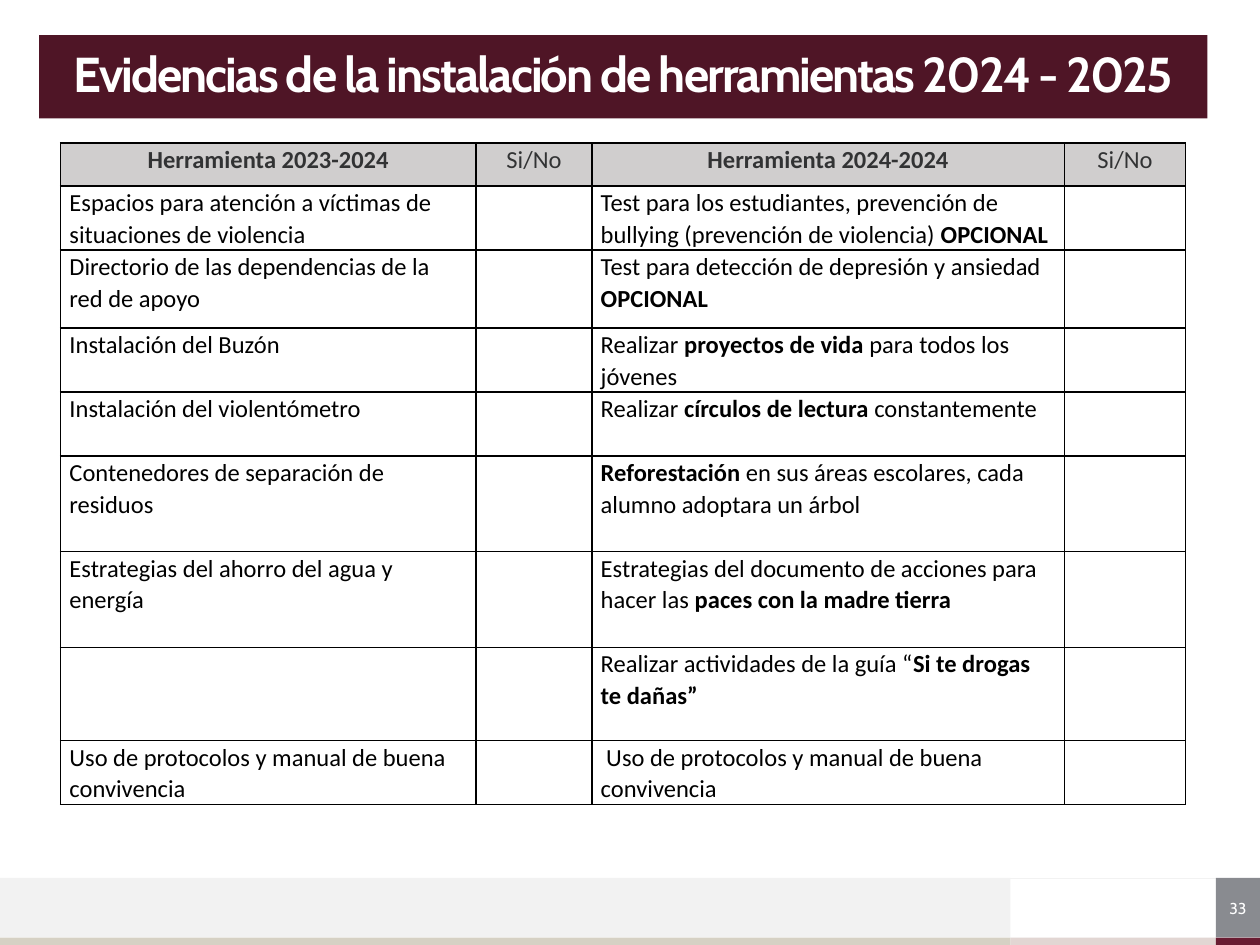
from lxml.etree import SubElement
from pptx import Presentation
from pptx.dml.color import RGBColor
from pptx.enum.shapes import MSO_CONNECTOR as Connector, MSO_SHAPE as Shape
from pptx.enum.text import MSO_ANCHOR as Anchor, PP_ALIGN as Align
from pptx.oxml import parse_xml
from pptx.oxml.ns import nsdecls, qn
from pptx.util import Cm, Pt

WHITE = RGBColor(0xFF, 0xFF, 0xFF)
BLACK = RGBColor(0x00, 0x00, 0x00)
WINE = RGBColor(0x4F, 0x15, 0x26)
CRIMSON = RGBColor(0x69, 0x1C, 0x32)
ROSE = RGBColor(0xE2, 0xD6, 0xD3)
SAND = RGBColor(0xD6, 0xD1, 0xC4)
PALE = RGBColor(0xF2, 0xF2, 0xF2)
SLATE = RGBColor(0x89, 0x8B, 0x90)
HEADER_GRAY = RGBColor(0xD0, 0xCE, 0xCE)
HEADER_TEXT = RGBColor(0x32, 0x33, 0x34)

COLUMN_WIDTHS = [8.38, 2.33, 9.53, 2.44]
ROW_HEIGHTS = [0.87, 1.29, 1.57, 1.29, 1.29, 1.93, 1.93, 1.88, 1.29]
HEADERS = ["Herramienta 2023-2024", "Si/No", "Herramienta 2024-2024", "Si/No"]
TOOLS = [
    ("Espacios para atención a víctimas de situaciones de violencia",
     [[("Test para los estudiantes, prevención de bullying (prevención de violencia) ", False),
       ("OPCIONAL", True)]]),
    ("Directorio de las dependencias de la red de apoyo",
     [[("Test para detección de depresión y ansiedad", False)], [("OPCIONAL", True)]]),
    ("Instalación del Buzón",
     [[("Realizar ", False), ("proyectos de vida ", True), ("para todos los jóvenes", False)]]),
    ("Instalación del violentómetro",
     [[("Realizar ", False), ("círculos de lectura ", True), ("constantemente", False)]]),
    ("Contenedores de separación de residuos",
     [[("Reforestación", True),
       (" en sus áreas escolares, cada alumno adoptara un árbol", False)]]),
    ("Estrategias del ahorro del agua y energía",
     [[("Estrategias del documento de acciones para hacer las ", False),
       ("paces con la madre tierra", True)]]),
    ("",
     [[("Realizar actividades de la guía “", False), ("Si te drogas te dañas”", True)]]),
    ("Uso de protocolos y manual de buena convivencia",
     [[(" Uso de protocolos y manual de buena convivencia", False)]]),
]


def add_run(paragraph, text, font_name, size, color, bold=False):
    run = paragraph.add_run()
    run.text = text
    run.font.name = font_name
    run.font.size = Pt(size)
    run.font.bold = bold
    run.font.color.rgb = color
    return run


def add_block(slide, left, top, width, height, color):
    block = slide.shapes.add_shape(Shape.RECTANGLE, Cm(left), Cm(top), Cm(width), Cm(height))
    block.shadow.inherit = False
    block.fill.solid()
    block.fill.fore_color.rgb = color
    block.line.fill.background()
    return block


def add_label(block, text, size, bold=False):
    frame = block.text_frame
    frame.word_wrap = True
    frame.vertical_anchor = Anchor.MIDDLE
    frame.margin_left = frame.margin_right = frame.margin_top = frame.margin_bottom = 0
    paragraph = frame.paragraphs[0]
    paragraph.alignment = Align.CENTER
    return paragraph, add_run(paragraph, text, "Cabin", size, WHITE, bold)


def add_title(slide, left, top, width, height):
    banner = add_block(slide, left, top, width, height, WINE)
    paragraph, title = add_label(
        banner, "Evidencias de la instalación de herramientas 2024 - 2025", 28, True)
    paragraph.line_spacing = 0.9
    title.font._element.set("spc", "-110")


def add_footer(slide, left, top, width, height):
    strip_height, number_width, band_width = 0.15, 0.89, 20.37
    band_height = height - strip_height
    strip_top = top + band_height
    number_left = left + width - number_width
    gap_left = left + band_width
    add_block(slide, gap_left, strip_top, number_left - gap_left, strip_height, ROSE)
    add_block(slide, left, top, band_width, band_height, PALE)
    add_block(slide, left, strip_top, band_width, strip_height, SAND)
    add_block(slide, number_left, strip_top, number_width, strip_height, CRIMSON)
    rule = slide.shapes.add_connector(
        Connector.STRAIGHT, Cm(left + width), Cm(top), Cm(left), Cm(top))
    rule.line.color.rgb = PALE
    rule.line.width = Pt(0.5)
    SubElement(rule._element.spPr, qn("a:effectLst"))
    page_number = add_block(slide, number_left, top, number_width, band_height, SLATE)
    add_label(page_number, "33", 9)


def add_borders(cell):
    properties = cell._tc.get_or_add_tcPr()
    for position, side in enumerate(("lnL", "lnR", "lnT", "lnB")):
        properties.insert(position, parse_xml(
            f'<a:{side} {nsdecls("a")} w="{Pt(1)}"><a:solidFill>'
            f'<a:srgbClr val="{BLACK}"/></a:solidFill></a:{side}>'))


def fill_cell(cell, paragraphs, color, alignment):
    cell.margin_left = cell.margin_right = Cm(0.18)
    cell.margin_top = cell.margin_bottom = 0
    for index, runs in enumerate(paragraphs):
        frame = cell.text_frame
        paragraph = frame.add_paragraph() if index else frame.paragraphs[0]
        paragraph.alignment = alignment
        paragraph.line_spacing = 1.07
        paragraph.font.size = Pt(14)
        for text, bold in runs:
            add_run(paragraph, text, "Calibri", 14, color, bold)


def add_tools_table(slide, left, top):
    table = slide.shapes.add_table(
        len(ROW_HEIGHTS), len(COLUMN_WIDTHS), Cm(left), Cm(top),
        Cm(sum(COLUMN_WIDTHS)), Cm(sum(ROW_HEIGHTS))).table
    for column, width in zip(table.columns, COLUMN_WIDTHS):
        column.width = Cm(width)
    for row, height in zip(table.rows, ROW_HEIGHTS):
        row.height = Cm(height)
    for index, header in enumerate(HEADERS):
        cell = table.cell(0, index)
        fill_cell(cell, [[(header, header != "Si/No")]], HEADER_TEXT, Align.CENTER)
        cell.fill.solid()
        cell.fill.fore_color.rgb = HEADER_GRAY
    for row_index, (previous_tool, new_tool) in enumerate(TOOLS, start=1):
        previous = [[(previous_tool, False)]] if previous_tool else [[]]
        for index, content in enumerate((previous, [[]], new_tool, [[]])):
            cell = table.cell(row_index, index)
            fill_cell(cell, content, BLACK, Align.LEFT)
            cell.fill.background()
    for cell in table.iter_cells():
        add_borders(cell)


def main():
    presentation = Presentation()
    presentation.slide_width = Cm(25.4)
    presentation.slide_height = Cm(19.05)
    slide = presentation.slides.add_slide(presentation.slide_layouts[6])
    add_footer(slide, 0, 17.7, 25.4, 1.35)
    add_tools_table(slide, 1.22, 2.88)
    add_title(slide, 0.79, 0.71, 23.55, 1.68)
    presentation.save("out.pptx")


if __name__ == "__main__":
    main()
